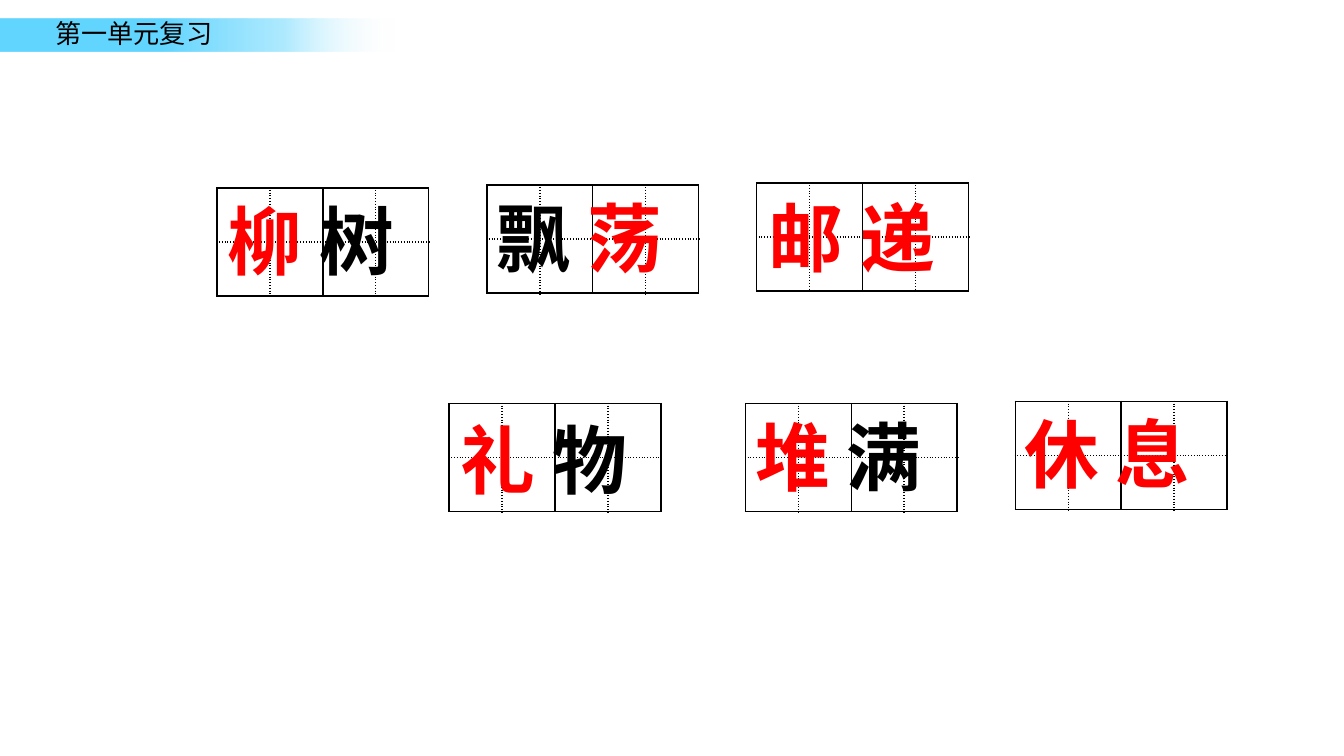
from lxml import etree
from pptx import Presentation
from pptx.dml.color import RGBColor
from pptx.enum import shapes, text
from pptx.oxml import ns
from pptx.util import Cm, Pt

FONT = "Noto Sans CJK SC"
BLACK = RGBColor(0x00, 0x00, 0x00)
RED = RGBColor(0xFF, 0x00, 0x00)
SKY = RGBColor(0x63, 0xD6, 0xFF)
PALE_SKY = RGBColor(0x97, 0xE4, 0xFF)
WHITE = RGBColor(0xFF, 0xFF, 0xFF)

# Position, opacity in percent, colour
BANNER_STOPS = [(40, 100, SKY), (70, 76, PALE_SKY), (97, 0, WHITE)]

COLUMNS, ROWS = 4, 2
GRID_WIDTH, GRID_HEIGHT = 4, 2.04
WORD_WIDTH, WORD_HEIGHT = 4.06, 1.96

# Grid left and top, word offset from the grid, coloured runs (lengths in cm)
WORDS = [
    (4.1, 3.55, -0.05, 0, [("柳", RED), (" 树", BLACK)]),
    (9.2, 3.5, -0.07, 0, [("飘", BLACK), (" 荡", RED)]),
    (14.3, 3.46, -0.02, 0.05, [("邮 递", RED)]),
    (8.49, 7.63, -0.03, 0.07, [("礼", RED), (" 物", BLACK)]),
    (14.09, 7.63, -0.07, 0.02, [("堆", RED), (" 满", BLACK)]),
    (19.19, 7.59, -0.08, 0, [("休 息", RED)]),
]


def add_child(parent, tag, **attributes):
    return etree.SubElement(parent, ns.qn(tag), attributes)


def format_run(run, size, color, bold=False):
    run.font.size = Pt(size)
    run.font.bold = bold
    run.font.color.rgb = color
    run.font.name = FONT
    add_child(run.font._element, "a:ea", typeface=FONT)


def fit_frame(frame):
    frame.word_wrap = False
    frame.auto_size = text.MSO_AUTO_SIZE.SHAPE_TO_FIT_TEXT
    frame.vertical_anchor = text.MSO_ANCHOR.TOP


def add_banner(slide, left, top, width, height):
    # Strip fading out to the right
    strip = slide.shapes.add_shape(
        shapes.MSO_SHAPE.RECTANGLE, Cm(left), Cm(top), Cm(width), Cm(height))
    strip.shadow.inherit = False
    strip.line.fill.background()
    strip.fill.gradient()
    strip.fill.gradient_angle = 0
    stop_list = strip._element.spPr.find(".//" + ns.qn("a:gsLst"))
    for stop in list(stop_list):
        stop_list.remove(stop)
    for position, opacity, color in BANNER_STOPS:
        stop = add_child(stop_list, "a:gs", pos=str(position * 1000))
        shade = add_child(stop, "a:srgbClr", val=str(color))
        add_child(shade, "a:alpha", val=str(opacity * 1000))

    # Title over the strip
    title = slide.shapes.title
    title.left, title.top = Cm(left + 0.79), Cm(top - 0.16)
    title.width, title.height = Cm(3.48), Cm(0.86)
    slide.shapes._spTree.append(title._element)
    frame = title.text_frame
    frame.text = "第一单元复习"
    fit_frame(frame)
    paragraph = frame.paragraphs[0]
    paragraph.alignment = text.PP_ALIGN.LEFT
    paragraph.line_spacing = 1.0
    format_run(paragraph.runs[0], 14, BLACK)


def set_borders(cell, dashes):
    properties = cell._tc.get_or_add_tcPr()
    for side, dash in dashes.items():
        line = add_child(properties, "a:ln" + side, w=str(Pt(1)))
        fill = add_child(line, "a:solidFill")
        add_child(fill, "a:srgbClr", val=str(BLACK))
        add_child(line, "a:prstDash", val=dash)


def add_writing_grid(slide, left, top, width, height):
    frame = slide.shapes.add_table(
        ROWS, COLUMNS, Cm(left), Cm(top), Cm(width), Cm(height))
    table = frame.table
    table.first_row = table.horz_banding = False
    for column in table.columns:
        column.width = Cm(width / COLUMNS)
    for row in table.rows:
        row.height = Cm(height / ROWS)
    # Each square is two by two cells: solid outside, dotted inside
    for row in range(ROWS):
        for column in range(COLUMNS):
            cell = table.cell(row, column)
            cell.margin_left = cell.margin_right = 0
            cell.margin_top = cell.margin_bottom = 0
            is_left, is_top = column % 2 == 0, row == 0
            set_borders(cell, {
                "L": "solid" if is_left else "sysDot",
                "R": "sysDot" if is_left else "solid",
                "T": "solid" if is_top else "sysDot",
                "B": "sysDot" if is_top else "solid",
            })
            cell.fill.background()


def add_word(slide, left, top, width, height, parts):
    box = slide.shapes.add_textbox(Cm(left), Cm(top), Cm(width), Cm(height))
    fit_frame(box.text_frame)
    paragraph = box.text_frame.paragraphs[0]
    for characters, color in parts:
        run = paragraph.add_run()
        run.text = characters
        format_run(run, 40, color, bold=True)


def main():
    presentation = Presentation()
    presentation.slide_width = Cm(25.4)
    presentation.slide_height = Cm(14.29)
    slide = presentation.slides.add_slide(presentation.slide_layouts[5])

    add_banner(slide, 0, 0.36, 7.7, 0.61)
    for left, top, shift_x, shift_y, parts in WORDS:
        add_writing_grid(slide, left, top, GRID_WIDTH, GRID_HEIGHT)
        add_word(slide, left + shift_x, top + shift_y,
                 WORD_WIDTH, WORD_HEIGHT, parts)

    presentation.save("out.pptx")


if __name__ == "__main__":
    main()
